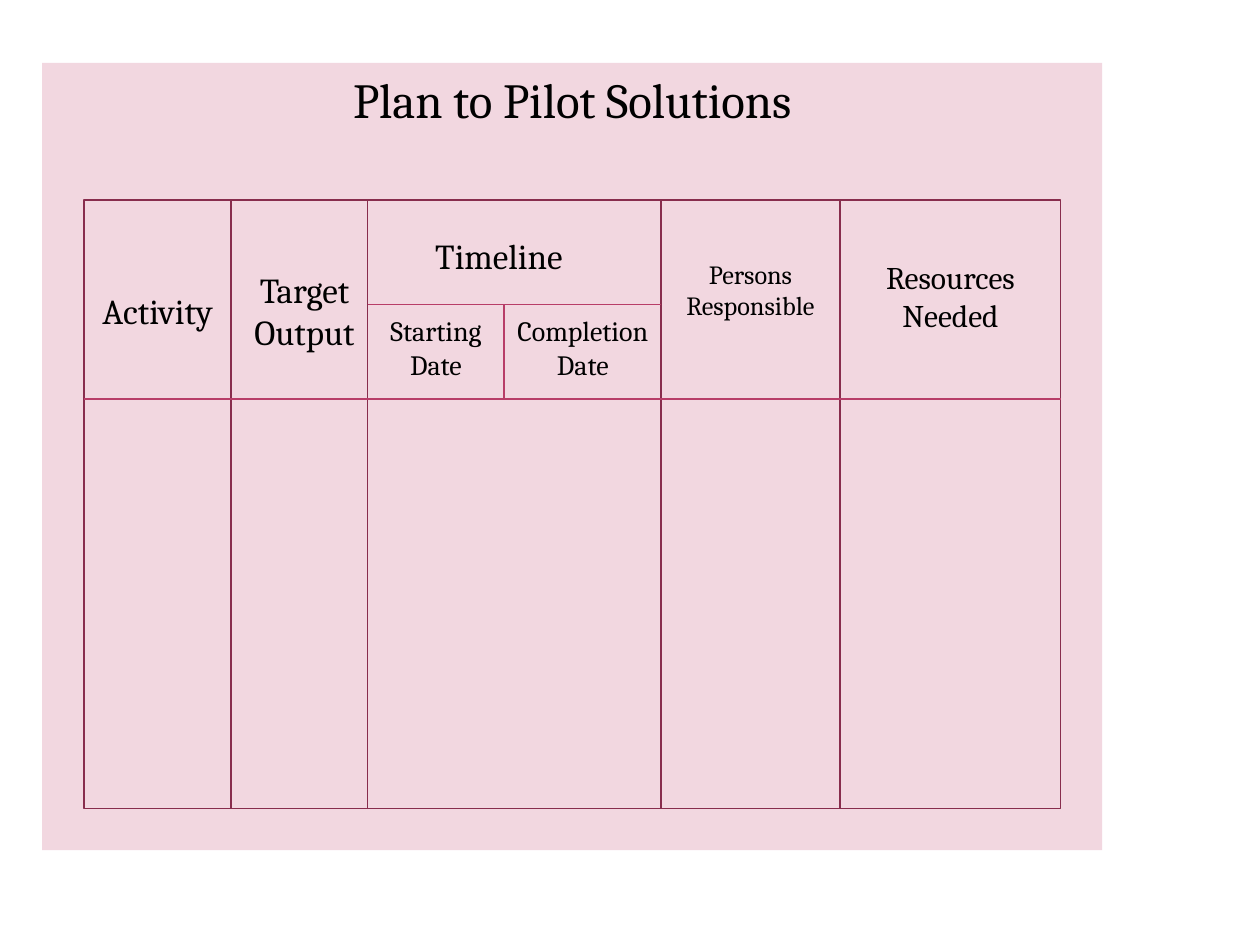
from pptx import Presentation
from pptx import util as u
from pptx.dml.color import RGBColor
from pptx.enum import shapes as s, text as t
from pptx.oxml.ns import qn
from lxml import etree


def rgb(code):
    return RGBColor.from_string(code)


def write(shape, words, size, font="Cambria", color="000000"):
    """Fill a shape with centred text, one paragraph per line of words."""
    frame = shape.text_frame
    frame.word_wrap = True
    frame.vertical_anchor = t.MSO_ANCHOR.TOP
    frame.text = words
    for para in frame.paragraphs:
        para.alignment = t.PP_ALIGN.CENTER
        for run in para.runs:
            run.font.size = u.Pt(size)
            run.font.name = font
            run.font.color.rgb = rgb(color)


deck = Presentation()
deck.slide_width, deck.slide_height = u.Cm(25.4), u.Cm(19.05)
slide = deck.slides.add_slide(deck.slide_layouts[6])
rect = s.MSO_SHAPE.RECTANGLE

# Panel with the title
panel = slide.shapes.add_shape(rect, u.Cm(0.85), u.Cm(1.27), u.Cm(21.37), u.Cm(15.87))
panel.shadow.inherit = False
panel.fill.solid()
panel.fill.fore_color.rgb = rgb("F2D7E0")
panel.line.fill.background()
write(panel, "Plan to Pilot Solutions", 28)

# Columns of the plan
edges = [1.69, 4.66, 7.41, 13.33, 16.93, 21.38]
top, split, head, base = 4.03, 6.14, 8.04, 16.3
for left, right in zip(edges, edges[1:]):
    col = slide.shapes.add_shape(
        rect, u.Cm(left), u.Cm(top), u.Cm(right - left), u.Cm(base - top))
    col.shadow.inherit = False
    col.fill.background()
    col.line.color.rgb = rgb("882D4D")
    col.line.width = u.Pt(1)

# Header rules: below the header, below the timeline, between the dates
mid = 10.16
rules = [
    (edges[0], head, edges[-1], head),
    (edges[2], split, edges[3], split),
    (mid, split, mid, head),
]
for ends in rules:
    rule = slide.shapes.add_connector(s.MSO_CONNECTOR.STRAIGHT, *map(u.Cm, ends))
    rule.line.color.rgb = rgb("B83D68")
    rule.line.width = u.Pt(0.9)
    etree.SubElement(rule._element.spPr, qn("a:effectLst"))

# Header labels: words, left, top, width, height, size
labels = [
    ("Activity", 1.7, 5.72, 2.96, 1.11, 20),
    ("Target\nOutput", 4.66, 5.29, 2.96, 1.97, 20),
    ("Timeline", 8.26, 4.6, 3.6, 1.11, 20),
    ("Starting\nDate", 6.99, 6.2, 3.6, 1.62, 16),
    ("Completion\nDate", 9.95, 6.2, 3.6, 1.62, 16),
    ("Persons\nResponsible", 13.33, 5.08, 3.6, 1.54, 15),
    ("Resources\nNeeded", 17.15, 5.08, 4.02, 1.8, 18),
]
for words, *place, size in labels:
    box = slide.shapes.add_textbox(*map(u.Cm, place))
    write(box, words, size)

deck.save("out.pptx")
